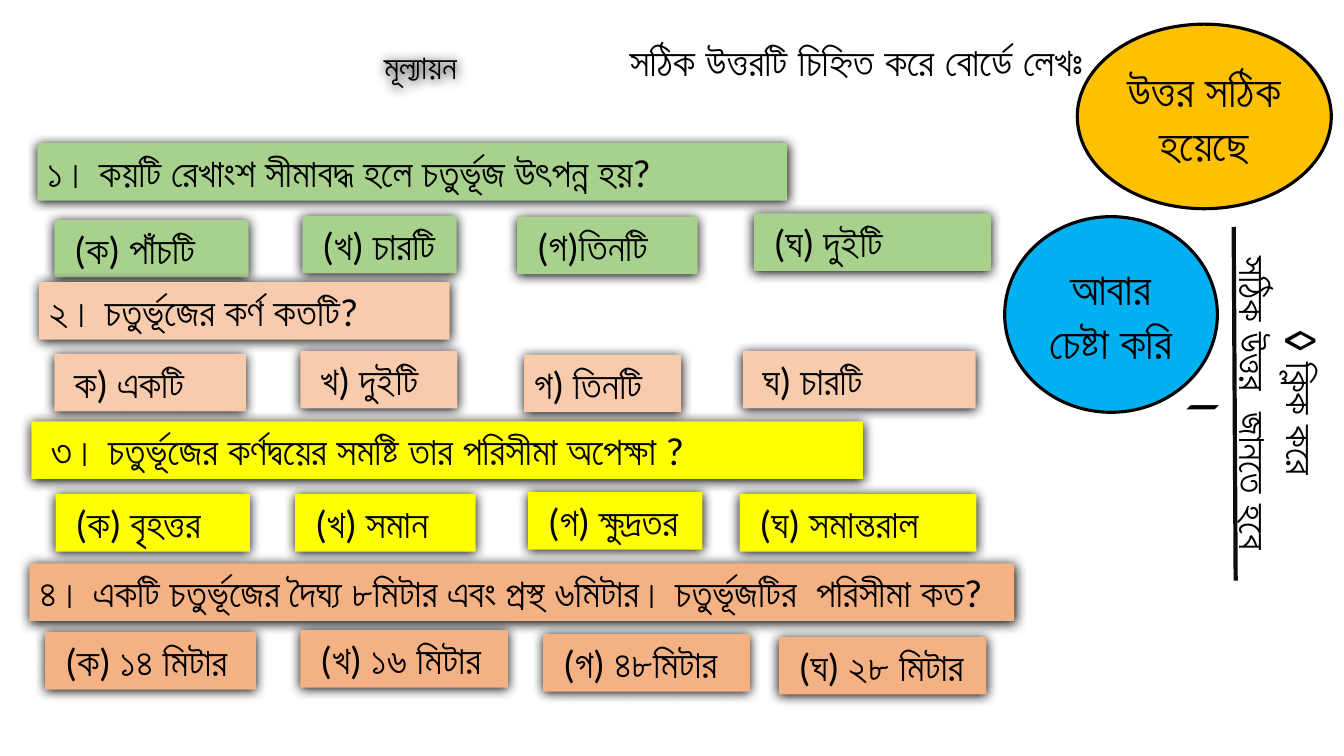
"""Builds a quiz slide on quadrilaterals with four questions and their answer options."""
import pptx
import pptx.dml.color
import pptx.enum.shapes
import pptx.enum.text
import pptx.oxml
import pptx.oxml.ns
import pptx.util
from dataclasses import dataclass

Cm = pptx.util.Cm
Pt = pptx.util.Pt
Rgb = pptx.dml.color.RGBColor.from_string
Shapes = pptx.enum.shapes.MSO_SHAPE
Anchor = pptx.enum.text.MSO_ANCHOR
Align = pptx.enum.text.PP_ALIGN


@dataclass(frozen=True)
class Theme:
    font: str = "Calibri"
    ink: str = "000000"
    rule: str = "0D0D0D"
    green: str = "A9D18E"
    peach: str = "F8CBAD"
    yellow: str = "FFFF00"
    orange: str = "F4B183"
    blue: str = "00B0F0"
    gold: str = "FFC000"
    title_size: int = 24
    body_size: int = 28
    badge_size: int = 32


theme = Theme()
BOX_HEIGHT = 1.45
NARROW, WIDE = 0.25, 0.5


def write(shape, text, size, align=Align.LEFT, anchor=Anchor.TOP, margin=NARROW, bold=False):
    frame = shape.text_frame
    frame.word_wrap = True
    frame.auto_size = pptx.enum.text.MSO_AUTO_SIZE.NONE
    frame.vertical_anchor = anchor
    frame.margin_left = Cm(margin)
    frame.margin_right = Cm(NARROW)
    frame.margin_top = frame.margin_bottom = Cm(0.13)
    frame.text = text
    for paragraph in frame.paragraphs:
        paragraph.alignment = align
        paragraph.line_spacing = 1.0
        paragraph.space_before = Pt(0)
        paragraph.font.name = theme.font
        paragraph.font.size = Pt(size)
        paragraph.font.bold = bold
        paragraph.font.color.rgb = Rgb(theme.ink)


def add_shadow(shape):
    namespace = pptx.oxml.ns.nsdecls("a")
    shape.element.spPr.append(pptx.oxml.parse_xml(
        f'<a:effectLst {namespace}><a:outerShdw blurRad="{Pt(8.5)}" dist="{Pt(1)}" '
        f'dir="5400000" algn="t" rotWithShape="0"><a:srgbClr val="{theme.ink}"/>'
        '</a:outerShdw></a:effectLst>'))


presentation = pptx.Presentation()
presentation.slide_width = Cm(33.87)
presentation.slide_height = Cm(19.05)
slide = presentation.slides.add_slide(presentation.slide_layouts[5])

title = slide.shapes.title
title.left, title.top, title.width, title.height = Cm(6.43), Cm(1.02), Cm(8.33), Cm(1.47)
write(title, "মূল্যায়ন", theme.title_size, Align.CENTER)
add_shadow(title)

questions = [
    (theme.green, [
        (0.94, 3.61, 18.9, NARROW, "১। কয়টি রেখাংশ সীমাবদ্ধ হলে চতুর্ভূজ উৎপন্ন হয়?"),
        (1.37, 5.54, 4.9, WIDE, "(ক) পাঁচটি"),
        (7.62, 5.44, 3.89, WIDE, "(খ) চারটি"),
        (13.03, 5.46, 4.55, WIDE, "(গ)তিনটি"),
        (19.0, 5.38, 5.97, WIDE, "(ঘ) দুইটি"),
    ]),
    (theme.peach, [
        (0.99, 7.11, 10.34, NARROW, "২। চতুর্ভূজের কর্ণ কতটি?"),
        (1.37, 8.92, 4.83, WIDE, "ক) একটি"),
        (7.57, 8.84, 3.96, WIDE, "খ) দুইটি"),
        (13.21, 8.94, 3.96, NARROW, "গ) তিনটি"),
        (18.72, 8.84, 5.87, WIDE, "ঘ) চারটি"),
    ]),
    (theme.yellow, [
        (0.79, 10.62, 20.96, WIDE, "৩। চতুর্ভূজের কর্ণদ্বয়ের সমষ্টি তার পরিসীমা অপেক্ষা ?"),
        (1.4, 12.45, 4.9, WIDE, "(ক) বৃহত্তর"),
        (7.44, 12.45, 4.55, WIDE, "(খ) সমান"),
        (13.31, 12.4, 4.39, WIDE, "(গ) ক্ষুদ্রতর"),
        (18.64, 12.45, 5.97, WIDE, "(ঘ) সমান্তরাল"),
    ]),
    (theme.orange, [
        (0.74, 14.2, 24.82, NARROW,
         "৪। একটি চতুর্ভূজের দৈঘ্য ৮মিটার এবং প্রস্থ ৬মিটার। চতুর্ভূজটির  পরিসীমা কত?"),
        (1.14, 15.93, 5.31, WIDE, "(ক) ১৪ মিটার"),
        (7.57, 15.88, 5.23, WIDE, "(খ) ১৬ মিটার"),
        (13.69, 15.98, 5.21, WIDE, "(গ) ৪৮মিটার"),
        (19.63, 16.05, 5.23, WIDE, "(ঘ) ২৮ মিটার"),
    ]),
]
for color, boxes in questions:
    for left, top, width, margin, text in boxes:
        box = slide.shapes.add_shape(
            Shapes.RECTANGLE, Cm(left), Cm(top), Cm(width), Cm(BOX_HEIGHT))
        box.fill.solid()
        box.fill.fore_color.rgb = Rgb(color)
        box.line.fill.background()
        add_shadow(box)
        write(box, text, theme.body_size, margin=margin)

instruction = slide.shapes.add_textbox(Cm(15.37), Cm(0.81), Cm(12.37), Cm(BOX_HEIGHT))
write(instruction, "সঠিক উত্তরটি চিহ্নিত করে বোর্ডে লেখঃ", theme.body_size, margin=WIDE, bold=True)

badges = [
    (25.32, 5.46, 5.36, 4.93, theme.blue, "আবার চেষ্টা করি"),
    (27.15, 0.61, 6.4, 4.65, theme.gold, "উত্তর সঠিক হয়েছে"),
]
for left, top, width, height, color, text in badges:
    badge = slide.shapes.add_shape(Shapes.OVAL, Cm(left), Cm(top), Cm(width), Cm(height))
    badge.shadow.inherit = False
    badge.fill.solid()
    badge.fill.fore_color.rgb = Rgb(color)
    badge.line.color.rgb = Rgb(theme.ink)
    badge.line.width = Pt(2.25)
    write(badge, text, theme.badge_size, Align.CENTER, Anchor.MIDDLE)

hint = slide.shapes.add_textbox(Cm(27.97), Cm(8.84), Cm(8.48), Cm(2.64))
hint.rotation = 90
write(hint, "◊ ক্লিক করে\nসঠিক উত্তর  জানতে হবে ।", theme.body_size, Align.CENTER, bold=True)

hint_rule = slide.shapes.add_connector(
    pptx.enum.shapes.MSO_CONNECTOR.STRAIGHT, Cm(31.09), Cm(5.72), Cm(31.14), Cm(14.63))
hint_rule.line.color.rgb = Rgb(theme.rule)
hint_rule.line.width = Pt(3)
pptx.oxml.ns.qn("a:effectLst")
hint_rule.element.spPr.append(
    pptx.oxml.parse_xml(f'<a:effectLst {pptx.oxml.ns.nsdecls("a")}/>'))

presentation.save("out.pptx")
